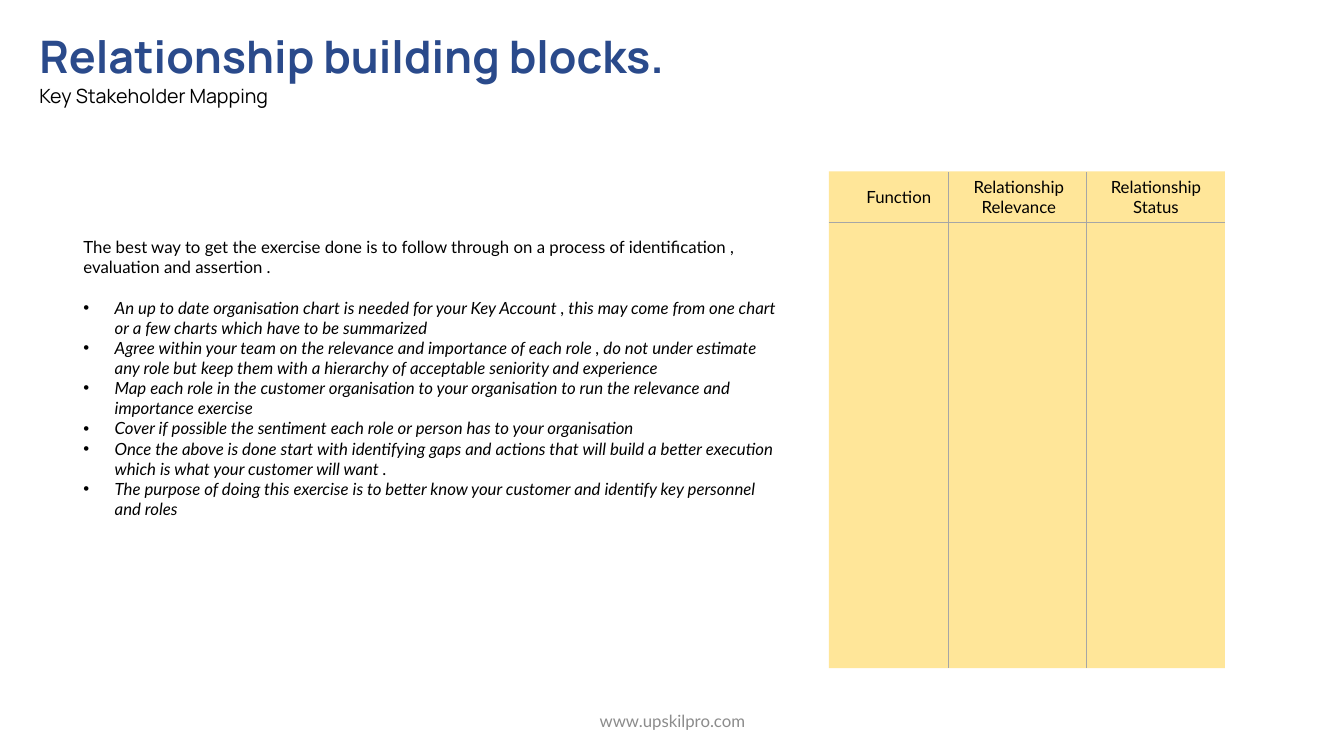
from pptx import Presentation
from pptx import util as u
from pptx.dml.color import RGBColor
from pptx.enum import shapes, text
from pptx.oxml import ns
from lxml import etree

COLORS = {"title": "2A4A8B", "ink": "000000", "panel": "FFE699",
          "rule": "A6A6A6", "footer": "8C8C8C"}
INTRO = ("The best way to get the exercise done is to follow through on a process of "
         "identification , evaluation and assertion .")
STEPS = [
    "An up to date organisation chart is needed for your Key Account , this may come "
    "from one chart or a few charts which have to be summarized",
    "Agree within your team on the relevance and importance of each role , do not under "
    "estimate any role but keep them with a hierarchy of acceptable seniority and experience",
    "Map each role in the customer organisation to your organisation to run the relevance "
    "and importance exercise",
    "Cover if possible the sentiment each role or person has to your organisation",
    "Once the above is done start with identifying gaps and actions that will build a "
    "better execution which is what your customer will want .",
    "The purpose of doing this exercise is to better know your customer and identify key "
    "personnel and roles",
]
HEADINGS = ["Function", "Relationship Relevance", "Relationship Status"]


def style(paragraph, size=12, color="ink", face="Lato", bold=False, italic=False):
    """Set the font of a whole paragraph."""
    font = paragraph.font
    font.name, font.size, font.bold, font.italic = face, u.Pt(size), bold, italic
    font.color.rgb = RGBColor.from_string(COLORS[color])


def add_bullet(paragraph, indent):
    """Give a paragraph a round bullet with a hanging indent."""
    properties = paragraph._p.get_or_add_pPr()
    properties.set("marL", str(u.Inches(indent)))
    properties.set("indent", str(-u.Inches(indent)))
    etree.SubElement(properties, ns.qn("a:buFont"), typeface="Arial")
    etree.SubElement(properties, ns.qn("a:buChar"), char="•")


def add_text(slide, left, top, width, height, anchor=text.MSO_ANCHOR.TOP):
    """Add a wrapping text box and return its text frame."""
    frame = slide.shapes.add_textbox(*map(u.Inches, (left, top, width, height))).text_frame
    frame.word_wrap = True
    frame.vertical_anchor = anchor
    return frame


def add_centred(slide, words, left, top, width, height, color="ink"):
    """Add one line of words centred in a box."""
    label = add_text(slide, left, top, width, height, text.MSO_ANCHOR.MIDDLE).paragraphs[0]
    label.text = words
    label.alignment = text.PP_ALIGN.CENTER
    style(label, color=color)


def add_heading(slide, left, top, width, height):
    """Fill the title placeholder with the heading and its subheading."""
    title = slide.shapes.title
    title.left, title.top, title.width, title.height = map(u.Inches, (left, top, width, height))
    frame = title.text_frame
    frame.text = "Relationship building blocks.\nKey Stakeholder Mapping"
    frame.vertical_anchor = text.MSO_ANCHOR.TOP
    frame.auto_size = text.MSO_AUTO_SIZE.NONE
    heading, subheading = frame.paragraphs
    style(heading, 32, "title", "Manrope", bold=True)
    style(subheading, 14, face="Manrope")
    subheading.line_spacing = 1.07
    for paragraph in frame.paragraphs:
        paragraph.alignment = text.PP_ALIGN.LEFT


def add_process(slide, left, top, width, height):
    """Add the introduction and the bulleted steps."""
    frame = add_text(slide, left, top, width, height)
    intro = frame.paragraphs[0]
    intro.text = INTRO
    intro.space_after = u.Pt(14.4)
    style(intro)
    for words in STEPS:
        step = frame.add_paragraph()
        step.text = words
        add_bullet(step, 0.31)
        style(step, italic=True)


def add_rule(slide, *ends):
    """Draw a thin grey line between two points."""
    rule = slide.shapes.add_connector(shapes.MSO_CONNECTOR.STRAIGHT, *map(u.Inches, ends))
    rule.line.color.rgb = RGBColor.from_string(COLORS["rule"])
    rule.line.width = u.Pt(0.5)
    etree.SubElement(rule._element.spPr, ns.qn("a:effectLst"))


def add_stakeholder_panel(slide, left, top, width, height):
    """Draw the panel with its three headed columns."""
    header, label_width = 0.51, 1.39
    panel = slide.shapes.add_shape(shapes.MSO_SHAPE.RECTANGLE,
                                   *map(u.Inches, (left, top, width, height)))
    panel.shadow.inherit = False
    panel.fill.solid()
    panel.fill.fore_color.rgb = RGBColor.from_string(COLORS["panel"])
    panel.line.fill.background()
    columns = [left, left + 1.19, left + 2.55]
    for words, column in zip(HEADINGS, columns):
        add_centred(slide, words, column, top, label_width, header)
    for column in columns[1:]:
        add_rule(slide, column, top + 0.01, column, top + height)
    add_rule(slide, left, top + header, left + width, top + header)


def main():
    """Build the slide and save it."""
    deck = Presentation()
    deck.slide_width, deck.slide_height = u.Inches(13.33), u.Inches(7.5)
    slide = deck.slides.add_slide(deck.slide_layouts[5])
    add_heading(slide, 0.29, 0.23, 9.32, 0.88)
    add_process(slide, 0.73, 2.3, 7.16, 2.93)
    add_stakeholder_panel(slide, 8.22, 1.7, 3.93, 4.93)
    add_centred(slide, "www.upskilpro.com", 4.42, 6.95, 4.5, 0.4, "footer")
    deck.save("out.pptx")


if __name__ == "__main__":
    main()
